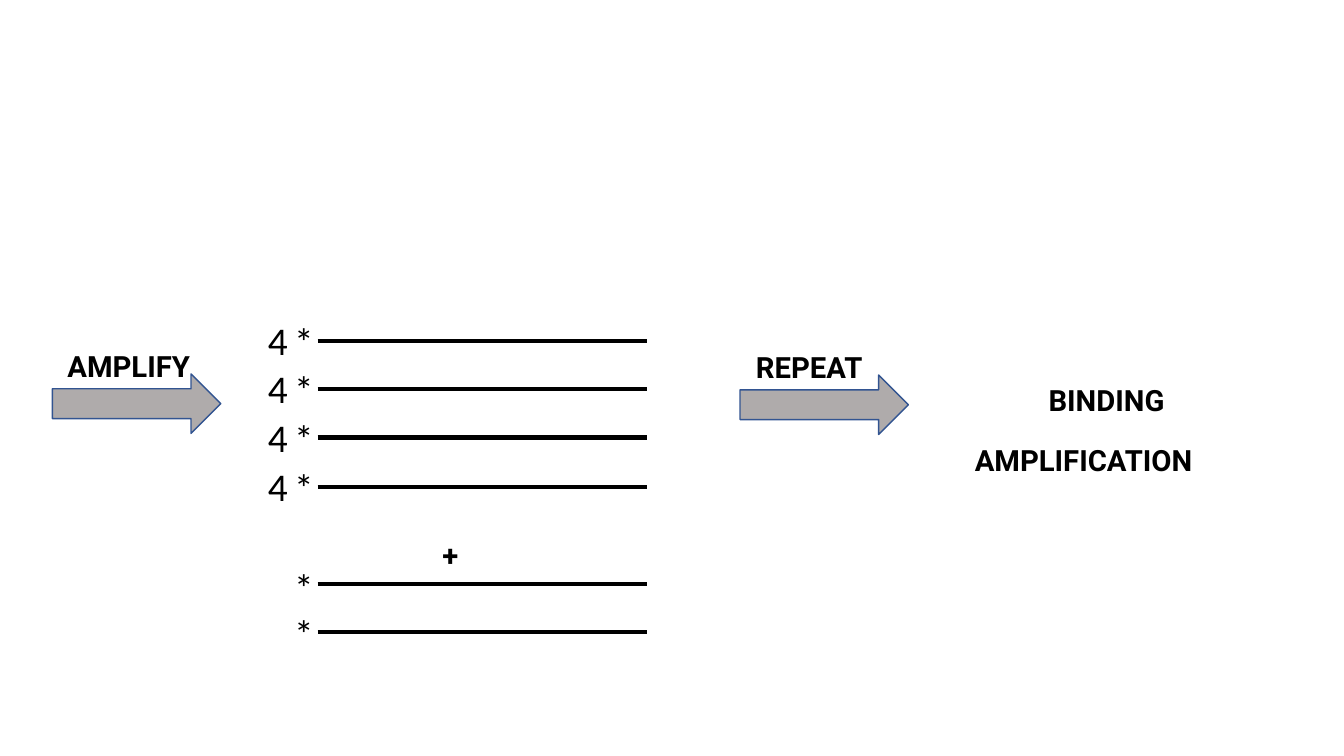
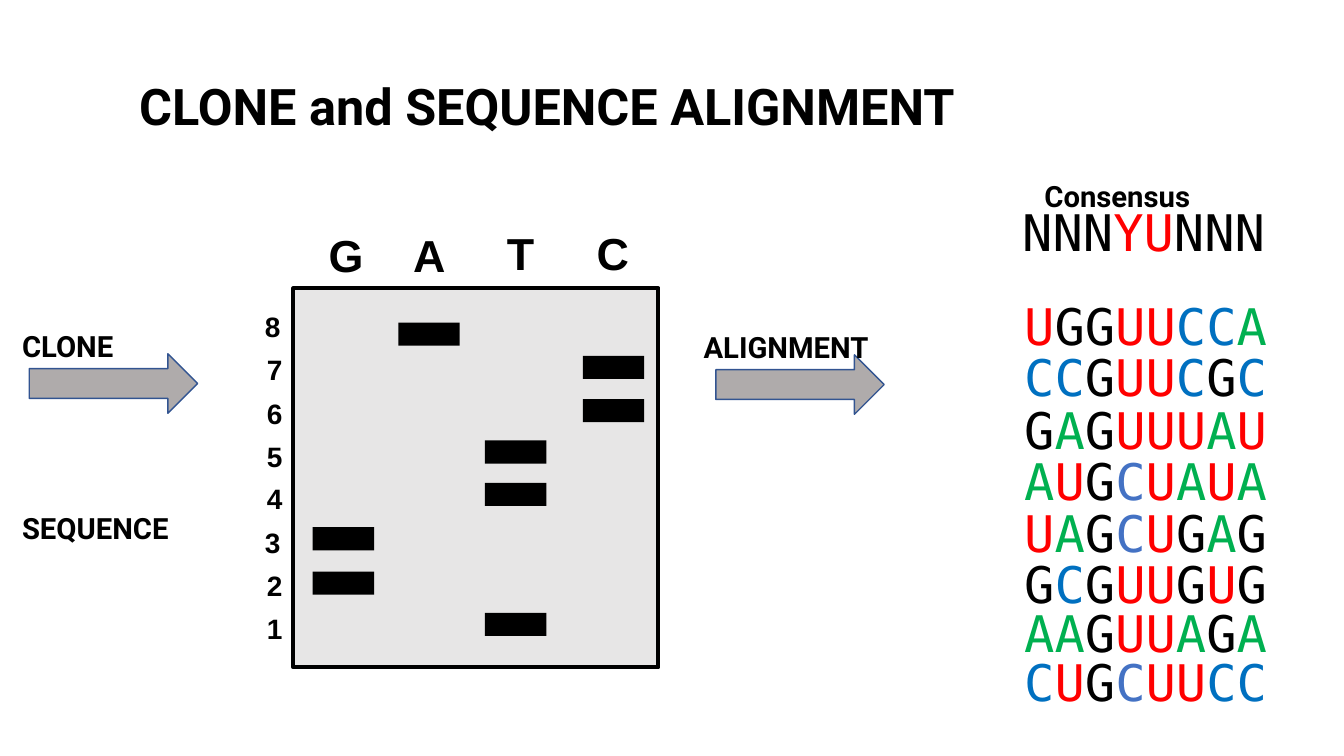
"""Build two slides on amplifying, cloning and aligning selected sequences."""
import itertools

import pptx
import pptx.dml.color
import pptx.enum.shapes
import pptx.enum.text
import pptx.oxml
import pptx.util

PX = 9144
SLIDE_W, SLIDE_H = 1333, 750
COLORS = {
    "black": "000000", "arrow": "AFABAB", "arrow_line": "325491",
    "gel": "E7E6E6", "red": "FF0000", "green": "00B050",
    "blue": "0070C0", "accent": "4472C4",
}
HEAD = {"font": "Roboto", "size": 36, "bold": True}
LABEL = {**HEAD, "baseline": 30000}
LANE = {"font": "Arial", "size": 32, "bold": True}
NUMBER = {"font": "Arial", "size": 20, "bold": True}
STRAND = {"font": "Calibri", "size": 28}
SEQUENCE = {"font": "DejaVu Sans Mono", "size": 36}

STRAND_TOP, STRAND_PITCH = 338, 48.2
STRANDS = [(0, "4", 28), (1, "4", 28), (2, "4", 28), (3, "4", 28),
           (5, "", 25), (6, "", 27)]
AMPLIFY_ARROWS = [(52, 371, "AMPLIFY", 57, 335, 168),
                  (734, 372, "REPEAT", 740, 336, 154)]

TITLE = "CLONE and SEQUENCE ALIGNMENT"
CLONE_ARROWS = [(29, 351, "CLONE", 12, 315, 209),
                (710, 352, "ALIGNMENT", 688, 316, 220)]
LANES = {"G": (316, 221, 310), "A": (400, 221, 395),
         "T": (493, 219, 481), "C": (582, 219, 578)}
READS = [("8", 253, "A", 320), ("7", 255, "C", 353), ("6", 255, "C", 396),
         ("5", 255, "T", 437), ("4", 255, "T", 479), ("3", 253, "G", 523),
         ("2", 255, "G", 567), ("1", 255, "T", 608)]
READ_TOP, READ_BOTTOM = 302, 602
CONSENSUS = "NNNYUNNN"
ALIGNED = [("UGGUUCCA", 288), ("CCGUUCGC", 338), ("GAGUUUAU", 391),
           ("AUGCUAUA", 442), ("UAGCUGAG", 493), ("GCGUUGUG", 544),
           ("AAGUUAGA", 592), ("CUGCUUCC", 641)]
BASE_COLORS = {"U": "red", "Y": "red", "A": "green", "C": "blue"}
CORE_COLUMN = 3


def emu(*lengths):
    return [pptx.util.Emu(round(v * PX)) for v in lengths]


def rgb(name):
    return pptx.dml.color.RGBColor.from_string(COLORS[name])


def write_text(tf, content, font, size, bold=False, baseline=0, aligns="l"):
    paragraphs = [content] if isinstance(content, str) else content
    tf.word_wrap = False
    tf.auto_size = pptx.enum.text.MSO_AUTO_SIZE.SHAPE_TO_FIT_TEXT
    tf.vertical_anchor = pptx.enum.text.MSO_ANCHOR.TOP
    for i, runs in enumerate(paragraphs):
        p = tf.add_paragraph() if i else tf.paragraphs[0]
        centred = aligns[i:i + 1] == "c"
        p.alignment = (pptx.enum.text.PP_ALIGN.CENTER if centred
                       else pptx.enum.text.PP_ALIGN.LEFT)
        for words, color in [(runs, "black")] if isinstance(runs, str) else runs:
            r = p.add_run()
            r.text = words
            r.font.name, r.font.size = font, pptx.util.Pt(size)
            r.font.bold = bold
            r.font.color.rgb = rgb(color)
            if baseline:
                r.font._element.set("baseline", str(baseline))


def add_text(s, content, x, y, w, h, **style):
    sp = s.shapes.add_textbox(*emu(x, y, w, h))
    write_text(sp.text_frame, content, **style)


def add_shape(s, kind, x, y, w, h, fill, line=None, weight=1):
    sp = s.shapes.add_shape(kind, *emu(x, y, w, h))
    sp.shadow.inherit = False
    sp.fill.solid()
    sp.fill.fore_color.rgb = rgb(fill)
    if line:
        sp.line.color.rgb = rgb(line)
        sp.line.width = pptx.util.Pt(weight)
    else:
        sp.line.fill.background()


def add_rect(s, *box, **style):
    add_shape(s, pptx.enum.shapes.MSO_SHAPE.RECTANGLE, *box, **style)


def add_arrows(s, arrows):
    for x, y, label, label_x, label_y, label_w in arrows:
        add_shape(s, pptx.enum.shapes.MSO_SHAPE.RIGHT_ARROW, x, y, 167, 59,
                  fill="arrow", line="arrow_line")
        add_text(s, label, label_x, label_y, label_w, 50, **LABEL)


def add_line(s, x1, y1, x2, y2):
    line = s.shapes.add_connector(pptx.enum.shapes.MSO_CONNECTOR.STRAIGHT,
                                  *emu(x1, y1, x2, y2))
    line.line.color.rgb = rgb("black")
    line.line.width = pptx.util.Pt(3)
    line._element.spPr.append(pptx.oxml.parse_xml(
        '<a:effectLst xmlns:a="http://schemas.openxmlformats.org/drawingml/2006/main"/>'))


def color_runs(sequence):
    names = [BASE_COLORS.get(base, "black") for base in sequence]
    if sequence[CORE_COLUMN] == "C":
        names[CORE_COLUMN] = "accent"
    groups = itertools.groupby(zip(sequence, names), key=lambda pair: pair[1])
    return [("".join(base for base, _ in pairs), name) for name, pairs in groups]


def build_amplification(prs):
    s = prs.slides.add_slide(prs.slide_layouts[6])
    add_arrows(s, AMPLIFY_ARROWS)
    for row, copies, star_rise in STRANDS:
        y = round(STRAND_TOP + row * STRAND_PITCH)
        add_line(s, 315, y, 642, y)
        if copies:
            add_text(s, copies, 256, y - 29, 40, 57, **STRAND)
        add_text(s, "*", 282, y - star_rise, 40, 57, **STRAND)
    add_text(s, "+", 429, 522, 40, 50, **LABEL)
    add_text(s, ["BINDING", "AMPLIFICATION"], 957, 368, 281, 91,
             aligns="cl", **LABEL)


def build_alignment(prs):
    s = prs.slides.add_slide(prs.slide_layouts[5])
    title = s.shapes.title
    title.left, title.top, title.width, title.height = emu(128, 69, 924, 71)
    write_text(title.text_frame, TITLE, **HEAD)
    add_rect(s, 291, 286, 362, 376, fill="gel", line="black", weight=3)
    for base, (x, y, _) in LANES.items():
        add_text(s, base, x, y, 52, 64, **LANE)
    pitch = (READ_BOTTOM - READ_TOP) / (len(READS) - 1)
    for i, (number, x, base, band_y) in enumerate(READS):
        add_text(s, number, x, round(READ_TOP + i * pitch), 36, 44, **NUMBER)
        add_rect(s, LANES[base][2], band_y, 61, 23, fill="black")
    add_arrows(s, CLONE_ARROWS)
    add_text(s, "SEQUENCE", 12, 495, 209, 50, **LABEL)
    add_text(s, "Consensus", 1026, 166, 202, 50, **LABEL)
    add_text(s, [color_runs(CONSENSUS)], 1004, 195, 263, 71, **SEQUENCE)
    for sequence, y in ALIGNED:
        add_text(s, [color_runs(sequence)], 1006, y, 263, 71, **SEQUENCE)


def main():
    prs = pptx.Presentation()
    prs.slide_width, prs.slide_height = emu(SLIDE_W, SLIDE_H)
    build_amplification(prs)
    build_alignment(prs)
    prs.save("out.pptx")


if __name__ == "__main__":
    main()
